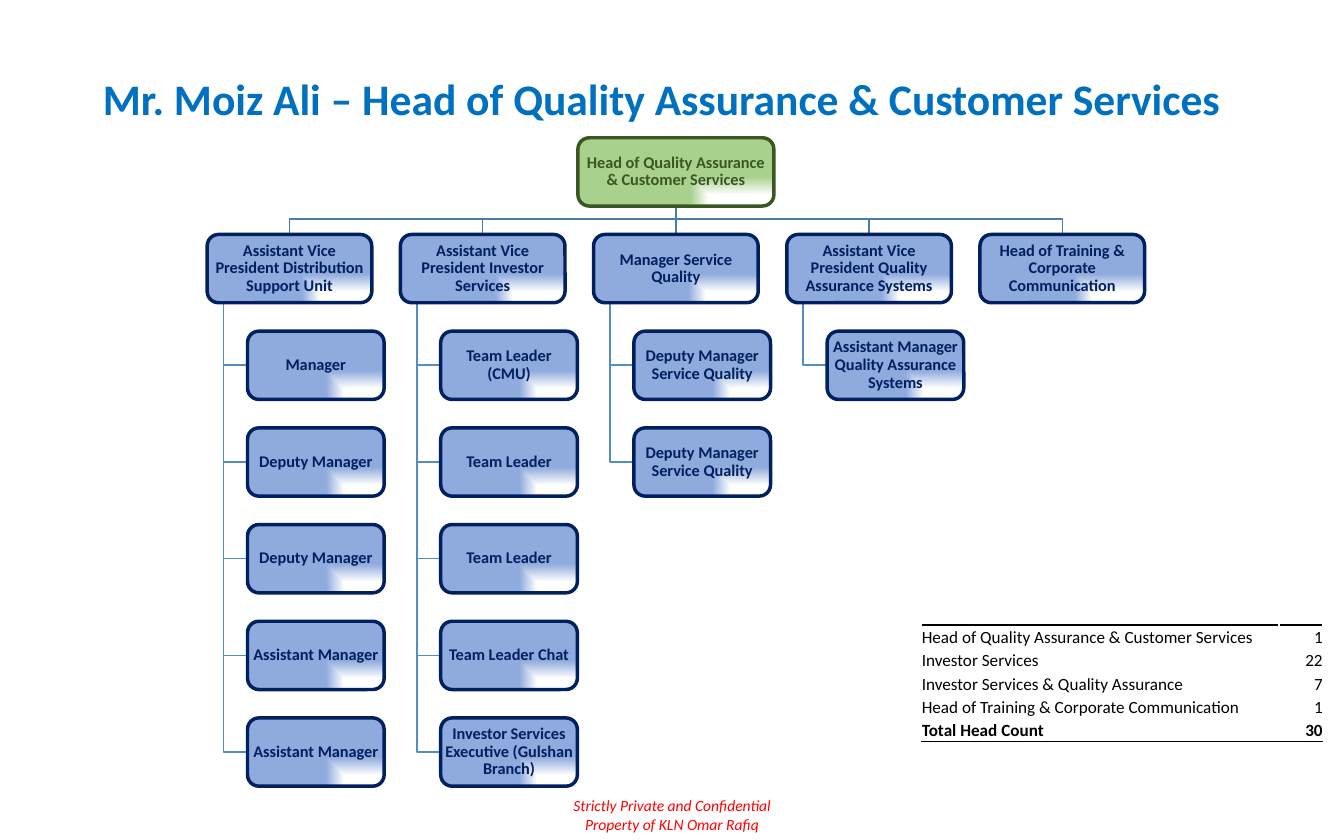
from dataclasses import dataclass

from lxml.etree import SubElement
from pptx import Presentation
from pptx.dml.color import RGBColor
from pptx.enum.shapes import MSO_CONNECTOR, MSO_SHAPE
from pptx.enum.text import MSO_ANCHOR, PP_ALIGN
from pptx.oxml import parse_xml
from pptx.oxml.ns import nsdecls, qn
from pptx.util import Inches, Pt


@dataclass(frozen=True)
class Theme:
    font: str = "Calibri"
    title: str = "0070C0"
    note: str = "FF0000"
    ink: str = "000000"
    trunk: str = "497CAB"
    twig: str = "538DC1"
    head: tuple = ("A9D18E", "385723")
    staff: tuple = ("8FAADC", "002060")
    title_size: float = 28
    box_size: float = 10.5
    table_size: float = 11
    note_size: float = 10


THEME = Theme()
LEFT, TOP = 1.85, 1.23
COL, ROW = 6.9 / 4, 5.18 / 6
HIGH = 0.61
HEAD_WIDE, LEAD_WIDE, TEAM_WIDE = 1.75, 1.47, 1.22
STEM, INDENT = 0.14, 0.36

TEAMS = [
    ("Assistant Vice President Distribution Support Unit",
     ["Manager", "Deputy Manager", "Deputy Manager",
      "Assistant Manager", "Assistant Manager"]),
    ("Assistant Vice President Investor Services",
     ["Team Leader (CMU)", "Team Leader", "Team Leader", "Team Leader Chat",
      "Investor Services Executive (Gulshan Branch)"]),
    ("Manager Service Quality", ["Deputy Manager Service Quality"] * 2),
    ("Assistant Vice President Quality Assurance Systems",
     ["Assistant Manager Quality Assurance Systems"]),
    ("Head of Training & Corporate Communication", []),
]
COUNTS = [
    ("Head of Quality Assurance & Customer Services", "1"),
    ("Investor Services", "22"),
    ("Investor Services & Quality Assurance", "7"),
    ("Head of Training & Corporate Communication", "1"),
    ("Total Head Count", "30"),
]


def col_x(col):
    return LEFT + col * COL


def row_y(row):
    return TOP + row * ROW


def mid_x(col):
    return col_x(col) + LEAD_WIDE / 2


def write(para, text, size, color, bold=False, italic=False):
    run = para.add_run()
    run.text = text
    font = run.font
    font.name, font.size = THEME.font, Pt(size)
    font.bold, font.italic = bold, italic
    font.color.rgb = RGBColor.from_string(color)


def add_text(slide, place, lines, size, color, spacing=None, wrap=True,
             align=PP_ALIGN.LEFT, anchor=MSO_ANCHOR.TOP, **style):
    frame = slide.shapes.add_textbox(*map(Inches, place)).text_frame
    frame.word_wrap, frame.vertical_anchor = wrap, anchor
    for index, line in enumerate(lines):
        para = frame.add_paragraph() if index else frame.paragraphs[0]
        para.alignment = align
        if spacing:
            para.line_spacing = spacing
        write(para, line, size, color, **style)


def shade(shape, color):
    stops = "".join(
        f'<a:gs pos="{share * 1000}"><a:srgbClr val="{tone}"/></a:gs>'
        for share, tone in [(0, "FFFFFF"), (32, "FFFFFF"), (85, color)])
    grad = parse_xml(
        f'<a:gradFill {nsdecls("a")} rotWithShape="1"><a:gsLst>{stops}</a:gsLst>'
        '<a:path path="rect"><a:fillToRect l="100000" t="100000"/></a:path>'
        '<a:tileRect r="-100000" b="-100000"/></a:gradFill>')
    shape._element.spPr.find(qn("a:prstGeom")).addnext(grad)


def add_box(slide, x, y, wide, text, colors):
    fill, dark = colors
    box = slide.shapes.add_shape(
        MSO_SHAPE.ROUNDED_RECTANGLE, *map(Inches, (x, y, wide, HIGH)))
    box.shadow.inherit = False
    shade(box, fill)
    box.line.color.rgb = RGBColor.from_string(dark)
    box.line.width = Pt(2.25)
    frame = box.text_frame
    frame.word_wrap, frame.vertical_anchor = True, MSO_ANCHOR.MIDDLE
    frame.margin_left = frame.margin_right = Inches(0.01)
    frame.margin_top = frame.margin_bottom = Inches(0.01)
    para = frame.paragraphs[0]
    para.alignment, para.line_spacing = PP_ALIGN.CENTER, 0.9
    write(para, text, THEME.box_size, dark, bold=True)


def add_link(slide, points, color):
    spots = [(Inches(x), Inches(y)) for x, y in points]
    if len({x for x, _ in spots}) == 1:
        link = slide.shapes.add_connector(
            MSO_CONNECTOR.STRAIGHT, *spots[0], *spots[-1])
        SubElement(link._element.spPr, qn("a:effectLst"))
    else:
        path = slide.shapes.build_freeform(*spots[0])
        path.add_line_segments(spots[1:], close=False)
        link = path.convert_to_shape()
        link.fill.background()
        link.shadow.inherit = False
    link.line.color.rgb = RGBColor.from_string(color)
    link.line.width = Pt(1)


def add_links(slide):
    hub, base = mid_x(2), row_y(0) + HIGH
    for col, (_, team) in enumerate(TEAMS):
        end, turn = mid_x(col), row_y(1) - STEM
        add_link(slide, [(hub, base), (hub, turn), (end, turn),
                         (end, row_y(1))], THEME.trunk)
        spine = col_x(col) + LEAD_WIDE / 10
        for row in range(2, len(team) + 2):
            level = row_y(row) + HIGH / 2
            add_link(slide, [(spine, row_y(1) + HIGH), (spine, level),
                             (col_x(col) + INDENT, level)], THEME.twig)


def add_boxes(slide):
    add_box(slide, mid_x(2) - HEAD_WIDE / 2, row_y(0), HEAD_WIDE,
            "Head of Quality Assurance & Customer Services", THEME.head)
    for col, (lead, team) in enumerate(TEAMS):
        add_box(slide, col_x(col), row_y(1), LEAD_WIDE, lead, THEME.staff)
        for row, role in enumerate(team, 2):
            add_box(slide, col_x(col) + INDENT, row_y(row), TEAM_WIDE,
                    role, THEME.staff)


def add_rule(cell, side):
    cell._tc.get_or_add_tcPr().insert(0, parse_xml(
        f'<a:{side} {nsdecls("a")} w="12700"><a:solidFill>'
        f'<a:srgbClr val="{THEME.ink}"/></a:solidFill></a:{side}>'))


def add_counts(slide):
    last = len(COUNTS) - 1
    table = slide.shapes.add_table(
        len(COUNTS), 2, *map(Inches, (8.23, 5.58, 3.58, 1.04))).table
    table.first_row = table.horz_banding = False
    table.columns[0].width, table.columns[1].width = Inches(3.19), Inches(0.39)
    for row, pair in enumerate(COUNTS):
        for col, text in enumerate(pair):
            cell = table.cell(row, col)
            cell.fill.background()
            cell.vertical_anchor = MSO_ANCHOR.BOTTOM
            cell.margin_left = cell.margin_right = 0
            cell.margin_top = cell.margin_bottom = 0
            para = cell.text_frame.paragraphs[0]
            para.alignment = PP_ALIGN.RIGHT if col else PP_ALIGN.LEFT
            write(para, text, THEME.table_size, THEME.ink, bold=row == last)
            if row in (0, last):
                add_rule(cell, "lnB" if row else "lnT")


def main():
    deck = Presentation()
    deck.slide_width, deck.slide_height = Inches(12), Inches(7.5)
    slide = deck.slides.add_slide(deck.slide_layouts[6])
    add_text(slide, (5.01, 7.06, 1.98, 0.44),
             ["Strictly Private and Confidential", "Property of KLN Omar Rafiq"],
             THEME.note_size, THEME.note, wrap=False,
             align=PP_ALIGN.CENTER, italic=True)
    add_text(slide, (0.82, 0.4, 10.35, 1.01),
             ["Mr. Moiz Ali – Head of Quality Assurance & Customer Services"],
             THEME.title_size, THEME.title, spacing=0.9,
             anchor=MSO_ANCHOR.MIDDLE, bold=True)
    add_links(slide)
    add_boxes(slide)
    add_counts(slide)
    deck.save("out.pptx")


if __name__ == "__main__":
    main()
